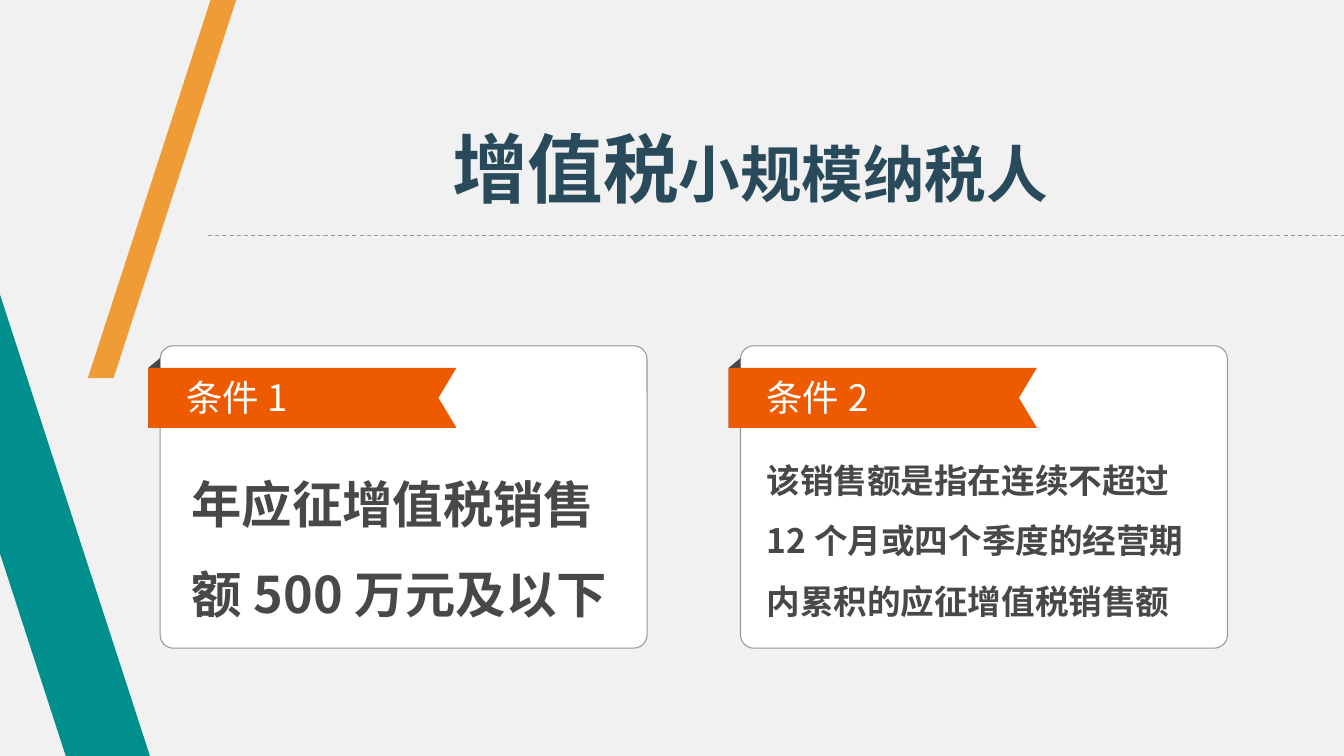
from dataclasses import dataclass

from lxml.etree import SubElement
from pptx import Presentation
from pptx.dml.color import RGBColor
from pptx.enum.dml import MSO_LINE
from pptx.enum.shapes import MSO_CONNECTOR, MSO_SHAPE
from pptx.enum.text import MSO_AUTO_SIZE
from pptx.oxml.ns import qn
from pptx.util import Pt


@dataclass(frozen=True)
class Theme:
    font: str = "Noto Sans CJK SC"
    background: str = "F1F1F1"
    amber: str = "F09C36"
    teal: str = "008F8C"
    orange: str = "ED5A00"
    white: str = "FFFFFF"
    gray: str = "969696"
    dark: str = "484849"
    navy: str = "294A5A"
    title_size: int = 54
    subtitle_size: int = 44
    label_size: int = 26
    large_size: int = 36
    body_size: int = 24
    line_width: float = 0.75


THEME = Theme()
SLIDE_WIDTH, SLIDE_HEIGHT = 960.48, 540
CARD_WIDTH, CARD_HEIGHT = 348, 216
CARD_TOP, FIRST_CARD_LEFT, CARD_PITCH = 247, 114.4, 414.8


def color(value):
    return RGBColor.from_string(value)


def add_polygon(slide, points, fill):
    (start, *rest) = [(Pt(x), Pt(y)) for x, y in points]
    builder = slide.shapes.build_freeform(*start)
    builder.add_line_segments(rest, close=True)
    shape = builder.convert_to_shape()
    shape.shadow.inherit = False
    shape.fill.solid()
    shape.fill.fore_color.rgb = color(fill)
    shape.line.fill.background()


def format_run(run, size, text_color, bold):
    run.font.name = THEME.font
    run.font.size = Pt(size)
    run.font.bold = bold
    run.font.color.rgb = color(text_color)
    east_asian = SubElement(run.font._element, qn("a:ea"))
    east_asian.set("typeface", THEME.font)


def add_text(slide, box, pieces, text_color, bold=True, spacing=None):
    """Write one paragraph made of (text, size) pieces."""
    text_box = slide.shapes.add_textbox(*map(Pt, box))
    text_frame = text_box.text_frame
    text_frame.word_wrap = True
    text_frame.auto_size = MSO_AUTO_SIZE.SHAPE_TO_FIT_TEXT
    paragraph = text_frame.paragraphs[0]
    if spacing:
        paragraph.line_spacing = spacing
    for text, size in pieces:
        run = paragraph.add_run()
        run.text = text
        format_run(run, size, text_color, bold)


def add_side_bands(slide, left, top, width, height):
    bottom = top + height
    add_polygon(slide, [(left + 150.5, top), (left + 168.8, top),
                        (left + 81.2, top + 270), (left + 62.8, top + 270)], THEME.amber)
    add_polygon(slide, [(left + width, bottom), (left + 47, bottom),
                        (left, bottom - 144.7), (left, bottom - 329.6)], THEME.teal)


def add_title(slide, left, top, width, height):
    pieces = [("增值税", THEME.title_size), ("小规模纳税人", THEME.subtitle_size)]
    add_text(slide, (left + 167.4, top, 460, 72.7), pieces, THEME.navy)
    rule_y = Pt(top + height)
    rule = slide.shapes.add_connector(
        MSO_CONNECTOR.STRAIGHT, Pt(left), rule_y, Pt(left + width), rule_y)
    rule.line.color.rgb = color(THEME.gray)
    rule.line.width = Pt(THEME.line_width)
    rule.line.dash_style = MSO_LINE.DASH
    SubElement(rule._element.spPr, qn("a:effectLst"))


def add_ribbon(slide, left, top, width, height, fold, label):
    """Draw a notched ribbon whose left end folds behind the card."""
    right, bottom = left + width, top + height
    add_polygon(slide, [(left + fold, top - 7), (left, top),
                        (left, bottom), (left + fold, bottom - 7)], THEME.dark)
    add_polygon(slide, [(right, top), (left, top), (left, bottom), (right, bottom),
                        (right - 12.8, top + height / 2)], THEME.orange)
    add_text(slide, (left + 20, top + 1.5, 175, 39), [(label, THEME.label_size)],
             THEME.white, bold=False)


def add_card(slide, left, top, width, height, label, body, size, inset, body_top):
    card = slide.shapes.add_shape(
        MSO_SHAPE.ROUNDED_RECTANGLE, Pt(left), Pt(top), Pt(width), Pt(height))
    card.adjustments[0] = 0.044
    card.shadow.inherit = False
    card.fill.solid()
    card.fill.fore_color.rgb = color(THEME.white)
    card.line.color.rgb = color(THEME.gray)
    card.line.width = Pt(THEME.line_width)
    fold = 8.4
    add_ribbon(slide, left - fold, top + 15.8, 220.2, 42.8, fold, label)
    add_text(slide, (left + inset, top + body_top, width - inset - 4, 131),
             [(body, size)], THEME.dark, spacing=1.5)


def main():
    presentation = Presentation()
    presentation.slide_width = Pt(SLIDE_WIDTH)
    presentation.slide_height = Pt(SLIDE_HEIGHT)
    slide = presentation.slides.add_slide(presentation.slide_layouts[6])
    slide.background.fill.solid()
    slide.background.fill.fore_color.rgb = color(THEME.background)

    add_side_bands(slide, 0, 0, 107.2, SLIDE_HEIGHT)
    add_title(slide, 148.6, 83.5, SLIDE_WIDTH - 148.6, 84.6)
    conditions = [
        ("条件1", "年应征增值税销售额500万元及以下", THEME.large_size, 15.2, 65.5),
        ("条件2", "该销售额是指在连续不超过12个月或四个季度的经营期内累积的应征增值税销售额",
         THEME.body_size, 11.5, 63.3),
    ]
    for index, condition in enumerate(conditions):
        add_card(slide, FIRST_CARD_LEFT + index * CARD_PITCH, CARD_TOP,
                 CARD_WIDTH, CARD_HEIGHT, *condition)
    presentation.save("out.pptx")


if __name__ == "__main__":
    main()
